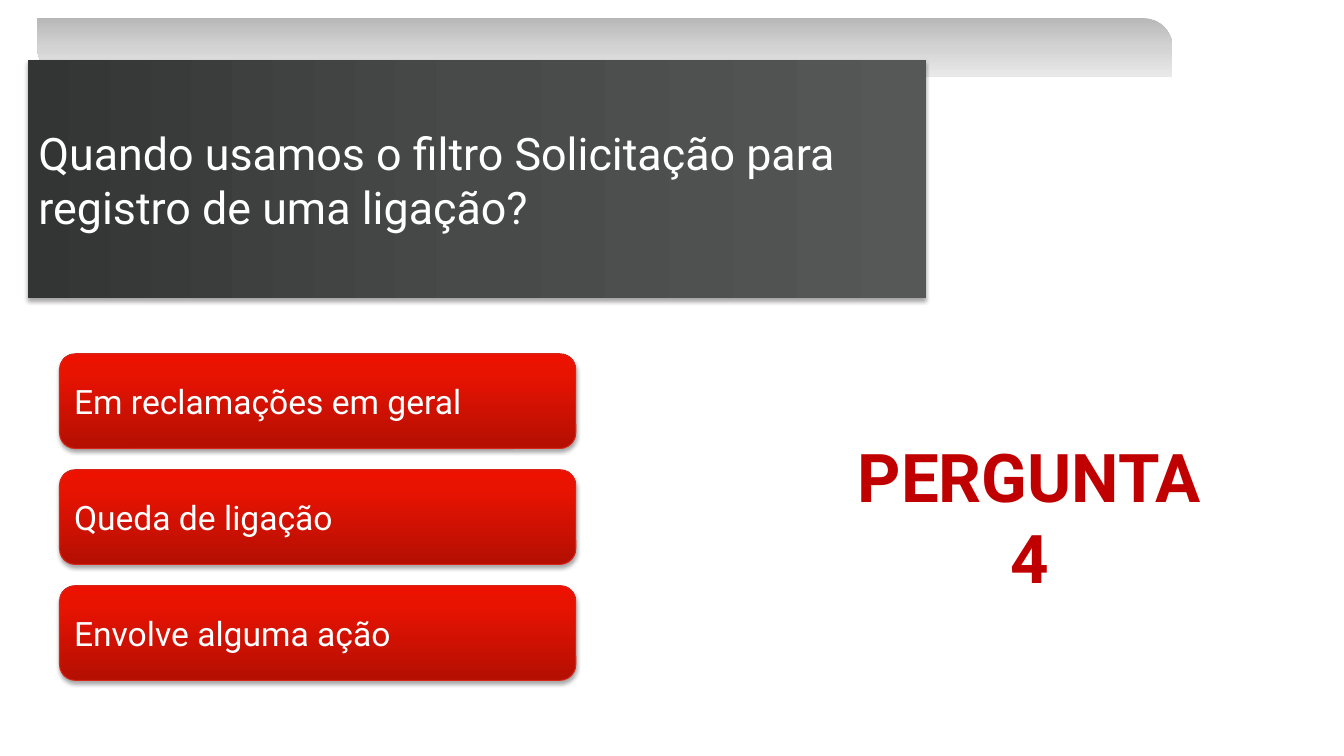
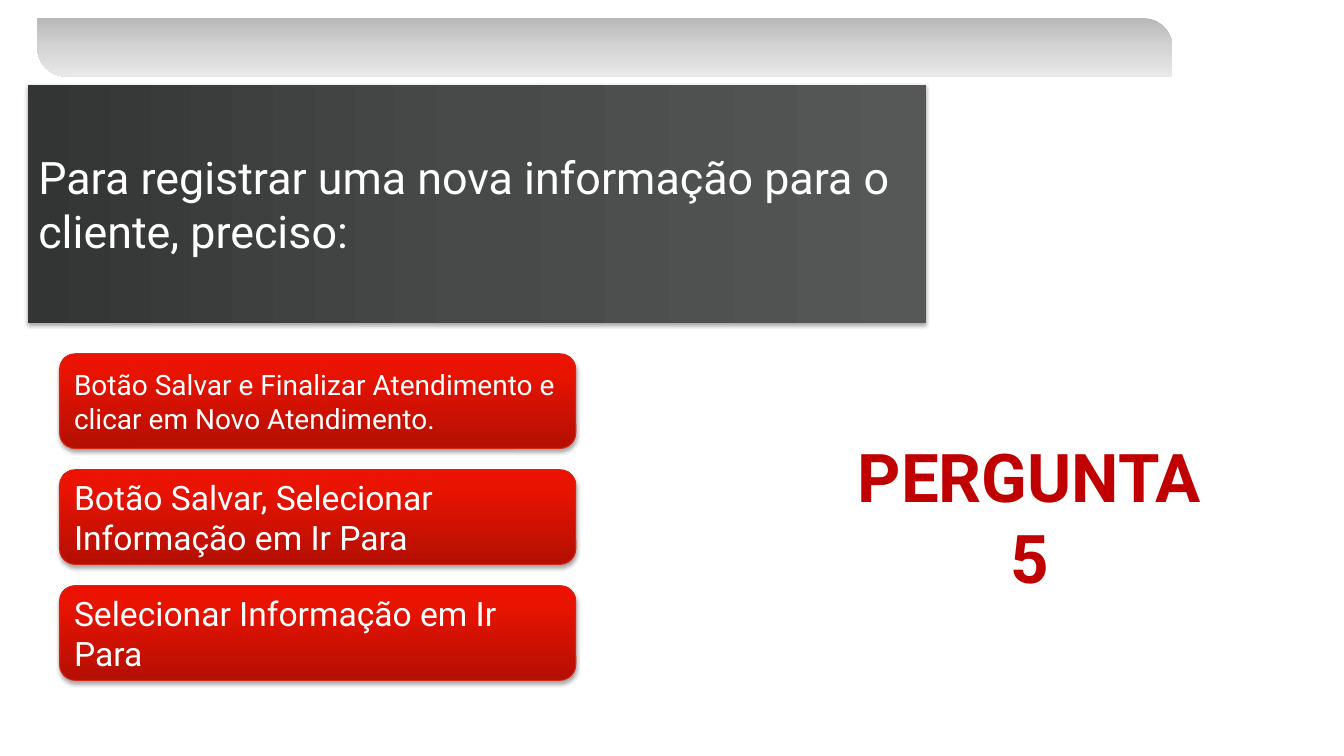
from typing import NamedTuple

from lxml.etree import SubElement
from pptx import Presentation
from pptx.dml.color import RGBColor
from pptx.enum.shapes import MSO_SHAPE
from pptx.enum.text import MSO_ANCHOR, MSO_AUTO_SIZE, PP_ALIGN
from pptx.oxml.ns import qn
from pptx.util import Pt

PX = 9144  # EMU per px, 100 px to the inch
FONT = "Roboto"
COLORS = {
    "white": "FFFFFF",
    "label": "C00000",
    "answer_line": "D52619",
    "shadow": "000000",
}


class Box(NamedTuple):
    x: int
    y: int
    w: int
    h: int

    def emu(self) -> list[int]:
        return [v * PX for v in self]


class Gradient(NamedTuple):
    """Stops as percent and colour; angle is counter-clockwise in degrees."""
    stops: tuple[tuple[int, str], ...]
    angle: int


class Answer(NamedTuple):
    text: str
    size: int = 24


class Question(NamedTuple):
    number: int
    top: int
    text: str
    answers: tuple[Answer, ...]


BAND_FILL = Gradient(((0, "B8B8B8"), (50, "D3D3D3"), (100, "E9E9E9")), 270)
QUESTION_FILL = Gradient(((0, "333434"), (50, "484A4A"), (100, "565858")), 0)
ANSWER_FILL = Gradient(((0, "B30F02"), (80, "E91302"), (100, "ED1100")), 90)

BAND = Box(37, 18, 1126, 58)
LABEL = Box(835, 427, 372, 172)
FIRST_ANSWER = Box(59, 351, 512, 94)
ANSWER_PITCH = 115

QUESTIONS = (
    Question(4, 60, "Quando usamos o filtro Solicitação para registro de uma ligação?", (
        Answer("Em reclamações em geral"),
        Answer("Queda de ligação"),
        Answer("Envolve alguma ação"),
    )),
    Question(5, 84, "Para registrar uma nova informação para o cliente, preciso:", (
        Answer("Botão Salvar e Finalizar Atendimento e clicar em Novo Atendimento.", 20),
        Answer("Botão Salvar, Selecionar Informação em Ir Para"),
        Answer("Selecionar Informação em Ir Para"),
    )),
)


def rgb(name: str) -> RGBColor:
    return RGBColor.from_string(COLORS[name])


def fill_gradient(sp, gradient: Gradient) -> None:
    sp.fill.gradient()
    sp.fill.gradient_angle = gradient.angle
    stops = sp.element.spPr.find(".//" + qn("a:gsLst"))
    for old in list(stops):
        stops.remove(old)
    for percent, color in gradient.stops:
        gs = SubElement(stops, qn("a:gs"), pos=str(percent * 1000))
        SubElement(gs, qn("a:srgbClr"), val=color)


def add_shadow(sp) -> None:
    sp.shadow.inherit = False
    effects = sp.element.spPr.find(qn("a:effectLst"))
    shadow = SubElement(effects, qn("a:outerShdw"), blurRad=str(Pt(3.1)),
                        dist=str(Pt(1.8)), dir="5400000", rotWithShape="0")
    color = SubElement(shadow, qn("a:srgbClr"), val=COLORS["shadow"])
    SubElement(color, qn("a:alpha"), val="35000")


def add_text(p, text: str, size: int, color: str, align: PP_ALIGN, bold: bool = False) -> None:
    p.alignment = align
    r = p.add_run()
    r.text = text
    r.font.name = FONT
    r.font.size = Pt(size)
    r.font.bold = bold
    r.font.color.rgb = rgb(color)


def fill_card(sp, text: str, size: int, gradient: Gradient) -> None:
    """Give a shape its gradient, shadow and left-aligned white text."""
    fill_gradient(sp, gradient)
    add_shadow(sp)
    tf = sp.text_frame
    tf.word_wrap = True
    tf.auto_size = MSO_AUTO_SIZE.NONE
    tf.vertical_anchor = MSO_ANCHOR.MIDDLE
    add_text(tf.paragraphs[0], text, size, "white", PP_ALIGN.LEFT)


def add_band(slide, layout) -> None:
    """Build the grey band on a slide, then move it to the shared layout."""
    sp = slide.shapes.add_shape(MSO_SHAPE.ROUND_2_DIAG_RECTANGLE, *BAND.emu())
    sp.adjustments[0] = 0.5
    sp.adjustments[1] = 0
    sp.element.spPr.xfrm.set("flipH", "1")
    fill_gradient(sp, BAND_FILL)
    sp.line.fill.background()
    sp.shadow.inherit = False
    sp.element.nvSpPr.cNvPr.set("id", "100")
    layout.shapes.element.append(sp.element)


def format_title(slide, question: Question) -> None:
    sp = slide.shapes.title
    sp.left, sp.top, sp.width, sp.height = Box(28, question.top, 890, 236).emu()
    geometry = SubElement(sp.element.spPr, qn("a:prstGeom"), prst="roundRect")
    SubElement(geometry, qn("a:avLst"))
    fill_card(sp, question.text, 32, QUESTION_FILL)


def add_answer(slide, answer: Answer, index: int) -> None:
    box = FIRST_ANSWER._replace(y=FIRST_ANSWER.y + index * ANSWER_PITCH)
    sp = slide.shapes.add_shape(MSO_SHAPE.ROUNDED_RECTANGLE, *box.emu())
    sp.line.color.rgb = rgb("answer_line")
    sp.line.width = Pt(0.75)
    fill_card(sp, answer.text, answer.size, ANSWER_FILL)


def add_label(slide, number: int) -> None:
    tf = slide.shapes.add_textbox(*LABEL.emu()).text_frame
    tf.word_wrap = False
    tf.auto_size = MSO_AUTO_SIZE.SHAPE_TO_FIT_TEXT
    for p, text in ((tf.paragraphs[0], "PERGUNTA"), (tf.add_paragraph(), str(number))):
        add_text(p, text, 48, "label", PP_ALIGN.CENTER, bold=True)


def main() -> None:
    prs = Presentation()
    prs.slide_width, prs.slide_height = 1333 * PX, 750 * PX
    layout = prs.slide_layouts.get_by_name("Title Only")
    for question in QUESTIONS:
        slide = prs.slides.add_slide(layout)
        if question is QUESTIONS[0]:
            add_band(slide, layout)
        format_title(slide, question)
        for index, answer in enumerate(question.answers):
            add_answer(slide, answer, index)
        add_label(slide, question.number)
    prs.save("out.pptx")


if __name__ == "__main__":
    main()
